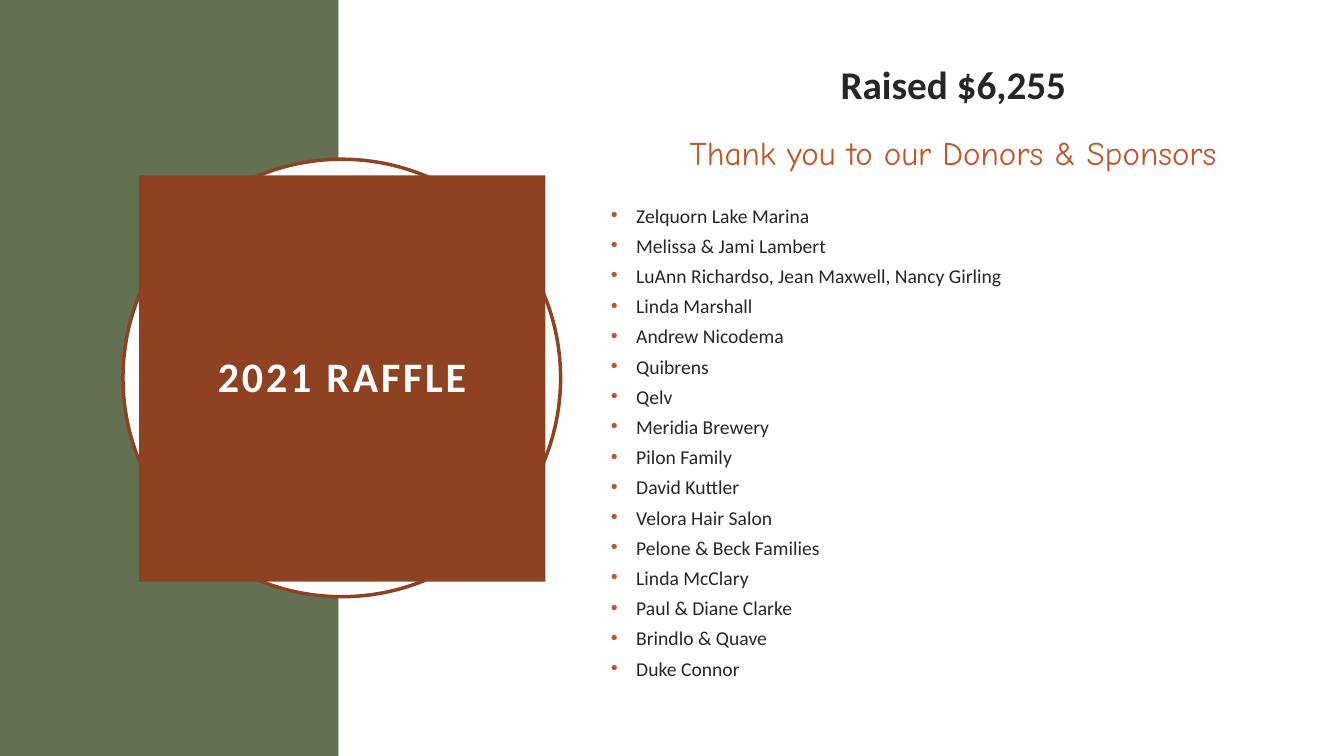
from dataclasses import dataclass
from typing import Optional

from lxml.etree import SubElement
from pptx import Presentation
from pptx.dml.color import RGBColor
from pptx.enum.shapes import MSO_SHAPE
from pptx.enum.text import MSO_ANCHOR, MSO_AUTO_SIZE, PP_ALIGN
from pptx.oxml.ns import qn
from pptx.shapes.base import BaseShape
from pptx.slide import Slide
from pptx.text.text import Font, TextFrame
from pptx.util import Inches, Pt

GREEN = "637052"
RUST = "8E4221"
ORANGE = "BD582C"
WHITE = "FFFFFF"
DARK = "262626"


@dataclass
class Panel:
    kind: MSO_SHAPE
    left: float
    top: float
    width: float
    height: float
    fill: str
    line: Optional[str] = None


@dataclass
class Line:
    text: str
    size: float
    color: str = DARK
    font: str = "Calibri"
    bold: bool = False
    space_before: float = 0
    bullet: bool = False


PANELS = [
    Panel(MSO_SHAPE.RECTANGLE, 0, 0, 3.36, 7.5, GREEN),
    Panel(MSO_SHAPE.RECTANGLE, 3.36, 0, 9.97, 7.5, WHITE),
    Panel(MSO_SHAPE.OVAL, 1.22, 1.58, 4.34, 4.34, WHITE, RUST),
]

HEADINGS = [
    Line("Raised $6,255", 28, bold=True),
    Line("Thank you to our Donors & Sponsors", 23.6, ORANGE, "Comic Neue", space_before=26.5),
]

DONORS = [
    "Zelquorn Lake Marina",
    "Melissa & Jami Lambert",
    "LuAnn Richardso, Jean Maxwell, Nancy Girling",
    "Linda Marshall",
    "Andrew Nicodema",
    "Quibrens",
    "Qelv",
    "Meridia Brewery",
    "Pilon Family",
    "David Kuttler",
    "Velora Hair Salon",
    "Pelone & Beck Families",
    "Linda McClary",
    "Paul & Diane Clarke",
    "Brindlo & Quave",
    "Duke Connor",
]


def rgb(color: str) -> RGBColor:
    return RGBColor.from_string(color)


def place(shape: BaseShape, left: float, top: float, width: float, height: float) -> None:
    """Position a placeholder and bring it to the front."""
    shape.left, shape.top = Inches(left), Inches(top)
    shape.width, shape.height = Inches(width), Inches(height)
    shape.element.getparent().append(shape.element)


def set_font(font: Font, name: str, size: float, color: str, bold: bool) -> None:
    font.name, font.size, font.bold = name, Pt(size), bold
    font.color.rgb = rgb(color)


def add_panel(slide: Slide, panel: Panel) -> None:
    shape = slide.shapes.add_shape(
        panel.kind, Inches(panel.left), Inches(panel.top), Inches(panel.width), Inches(panel.height)
    )
    shape.shadow.inherit = False
    shape.fill.solid()
    shape.fill.fore_color.rgb = rgb(panel.fill)
    if panel.line:
        shape.line.color.rgb = rgb(panel.line)
        shape.line.width = Pt(2.5)
    else:
        shape.line.fill.background()


def add_line(frame: TextFrame, line: Line, first: bool) -> None:
    paragraph = frame.paragraphs[0] if first else frame.add_paragraph()
    paragraph.text = line.text
    properties = paragraph._p.get_or_add_pPr()
    indent = Inches(0.25) if line.bullet else 0
    properties.set("marL", str(indent))
    properties.set("indent", str(-indent))
    if line.bullet:
        bullet_color = SubElement(properties, qn("a:buClr"))
        SubElement(bullet_color, qn("a:srgbClr"), val=ORANGE)
        SubElement(properties, qn("a:buFont"), typeface="Arial")
        SubElement(properties, qn("a:buChar"), char="•")
    else:
        SubElement(properties, qn("a:buNone"))
    paragraph.alignment = PP_ALIGN.LEFT if line.bullet else PP_ALIGN.CENTER
    paragraph.line_spacing = 0.7
    paragraph.space_before = Pt(line.space_before)
    paragraph.space_after = Pt(0)
    set_font(paragraph.font, line.font, line.size, line.color, line.bold)


def fill_title(slide: Slide) -> None:
    title = slide.shapes.title
    place(title, 1.38, 1.74, 4.03, 4.03)
    title.fill.solid()
    title.fill.fore_color.rgb = rgb(RUST)
    frame = title.text_frame
    frame.text = "2021 RAFFLE"
    frame.word_wrap = True
    frame.auto_size = MSO_AUTO_SIZE.NONE
    frame.vertical_anchor = MSO_ANCHOR.MIDDLE
    frame.margin_left = frame.margin_right = Inches(0.2)
    frame.margin_top = frame.margin_bottom = Inches(0.2)
    paragraph = frame.paragraphs[0]
    paragraph.alignment = PP_ALIGN.CENTER
    paragraph.line_spacing = 0.9
    set_font(paragraph.font, "Calibri", 30, WHITE, True)
    paragraph.runs[0]._r.get_or_add_rPr().set("spc", "200")


def fill_body(slide: Slide) -> None:
    body = slide.placeholders[1]
    place(body, 5.96, 0.27, 6.99, 6.96)
    frame = body.text_frame
    frame.word_wrap = True
    frame.auto_size = MSO_AUTO_SIZE.NONE
    frame.vertical_anchor = MSO_ANCHOR.TOP
    frame.margin_top = Inches(0.46)
    donors = [
        Line(donor, 14, space_before=9.8 if index else 27.5, bullet=True)
        for index, donor in enumerate(DONORS)
    ]
    for index, line in enumerate(HEADINGS + donors):
        add_line(frame, line, first=index == 0)


def main() -> None:
    presentation = Presentation()
    presentation.slide_width = Inches(13.33)
    presentation.slide_height = Inches(7.5)
    slide = presentation.slides.add_slide(presentation.slide_layouts[1])
    for panel in PANELS:
        add_panel(slide, panel)
    fill_title(slide)
    fill_body(slide)
    presentation.save("out.pptx")


if __name__ == "__main__":
    main()
